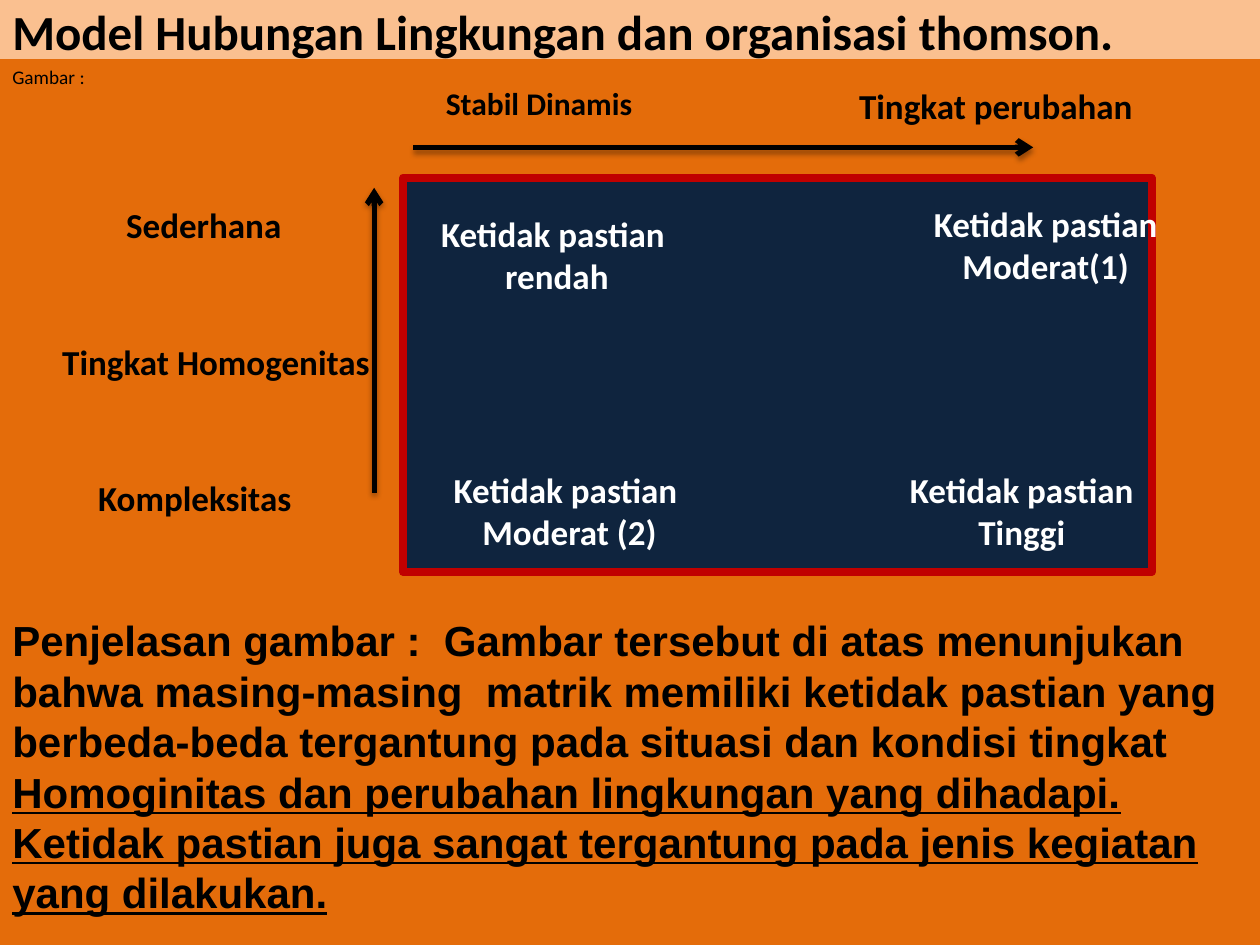
from dataclasses import dataclass

from lxml.etree import SubElement
from pptx import Presentation
from pptx.dml.color import RGBColor
from pptx.enum.shapes import MSO_CONNECTOR, MSO_SHAPE
from pptx.enum.text import MSO_ANCHOR, MSO_AUTO_SIZE, PP_ALIGN
from pptx.oxml.ns import qn
from pptx.slide import Slide
from pptx.util import Pt


def rgb(value):
    return RGBColor.from_string(value)


def write(paragraph, text, size=20, font="Calibri", color="000000", bold=True,
          underline=False, align=PP_ALIGN.LEFT, before=0, indent=0):
    paragraph.alignment = align
    paragraph.space_before = Pt(before)
    paragraph._p.get_or_add_pPr().set("marL", str(Pt(indent)))
    run = paragraph.add_run()
    run.text = text
    run.font.size = Pt(size)
    run.font.name = font
    run.font.color.rgb = rgb(color)
    run.font.bold = bold
    run.font.underline = underline


@dataclass
class MatrixSlide:
    slide: Slide
    ink: str = "000000"
    light: str = "FFFFFF"
    heading_fill: str = "FAC090"
    body_fill: str = "E46C0A"
    matrix_fill: str = "0F243E"
    matrix_border: str = "C00000"

    def panel(self, left, top, width, height, fill, border=None,
              anchor=MSO_ANCHOR.TOP):
        panel = self.slide.shapes.add_shape(
            MSO_SHAPE.RECTANGLE, Pt(left), Pt(top), Pt(width), Pt(height))
        panel.shadow.inherit = False
        panel.fill.solid()
        panel.fill.fore_color.rgb = rgb(fill)
        if border:
            panel.line.color.rgb = rgb(border)
            panel.line.width = Pt(4.5)
        else:
            panel.line.fill.background()
        panel.text_frame.word_wrap = True
        panel.text_frame.vertical_anchor = anchor
        return panel.text_frame

    def label(self, left, top, width, height, lines, wrap=False, **style):
        box = self.slide.shapes.add_textbox(Pt(left), Pt(top), Pt(width), Pt(height))
        frame = box.text_frame
        frame.word_wrap = wrap
        frame.auto_size = MSO_AUTO_SIZE.SHAPE_TO_FIT_TEXT
        for number, line in enumerate(lines):
            paragraph = frame.add_paragraph() if number else frame.paragraphs[0]
            write(paragraph, line, **style)
        return frame

    def arrow(self, x1, y1, x2, y2):
        arrow = self.slide.shapes.add_connector(
            MSO_CONNECTOR.STRAIGHT, Pt(x1), Pt(y1), Pt(x2), Pt(y2))
        arrow.line.color.rgb = rgb(self.ink)
        arrow.line.width = Pt(3)
        properties = arrow._element.spPr
        SubElement(properties.find(qn("a:ln")), qn("a:tailEnd"), type="arrow")
        effects = SubElement(properties, qn("a:effectLst"))
        shadow = SubElement(effects, qn("a:outerShdw"), blurRad=str(Pt(3.1)),
                            dist=str(Pt(1.8)), dir="5400000", rotWithShape="0")
        tint = SubElement(shadow, qn("a:srgbClr"), val=self.ink)
        SubElement(tint, qn("a:alpha"), val="35000")


def main():
    deck = Presentation()
    deck.slide_width, deck.slide_height = Pt(720), Pt(540)
    page = MatrixSlide(deck.slides.add_slide(deck.slide_layouts[6]))

    heading = page.panel(0, -2.2, 720, 39.6, page.heading_fill,
                         anchor=MSO_ANCHOR.MIDDLE)
    write(heading.paragraphs[0], "Model Hubungan Lingkungan dan organisasi thomson.",
          size=28)

    body = page.panel(0, 33.8, 720, 506.2, page.body_fill)
    write(body.paragraphs[0], "Gambar :", size=11, bold=False)
    for level, before, indent in (
        ("Sederhana", 66, 65),
        ("Tingkat Homogenitas", 54, 28.5),
        ("Kompleksitas", 54, 49),
    ):
        write(body.add_paragraph(), level, before=before, indent=indent)

    page.panel(230.4, 101.5, 427.7, 225.4, page.matrix_fill, page.matrix_border)
    page.label(247.7, 44.6, 121.7, 28.8, ["Stabil Dinamis"], size=18)
    page.label(483.8, 44.6, 172.1, 31.7, ["Tingkat perubahan"])
    page.arrow(236.2, 84.2, 590.4, 84.2)
    page.arrow(213.8, 281.5, 213.8, 107.3)

    for left, top, width, lines in (
        (244.1, 118.1, 148.3, ["Ketidak pastian ", "rendah"]),
        (523.4, 112.3, 148.3, ["Ketidak pastian", "Moderat(1)"]),
        (251.3, 264.2, 148.3, ["Ketidak pastian ", "Moderat (2)"]),
        (511.9, 264.2, 144, ["Ketidak pastian", "Tinggi"]),
    ):
        page.label(left, top, width, 55.4, lines, color=page.light,
                   align=PP_ALIGN.CENTER)

    prose = {"size": 24, "font": "Arial"}
    explanation = page.label(0, 347.8, 720, 181.4, [
        "Penjelasan gambar :  Gambar tersebut di atas menunjukan bahwa masing-masing  "
        "matrik memiliki ketidak pastian yang berbeda-beda tergantung pada situasi dan "
        "kondisi tingkat "], wrap=True, **prose).paragraphs[0]
    for text, underline in (
        ("Homoginitas dan perubahan lingkungan yang dihadapi.", True),
        (" ", False),
        ("Ketidak pastian juga sangat tergantung pada jenis kegiatan yang dilakukan.",
         True),
    ):
        write(explanation, text, underline=underline, **prose)

    deck.save("out.pptx")


if __name__ == "__main__":
    main()
